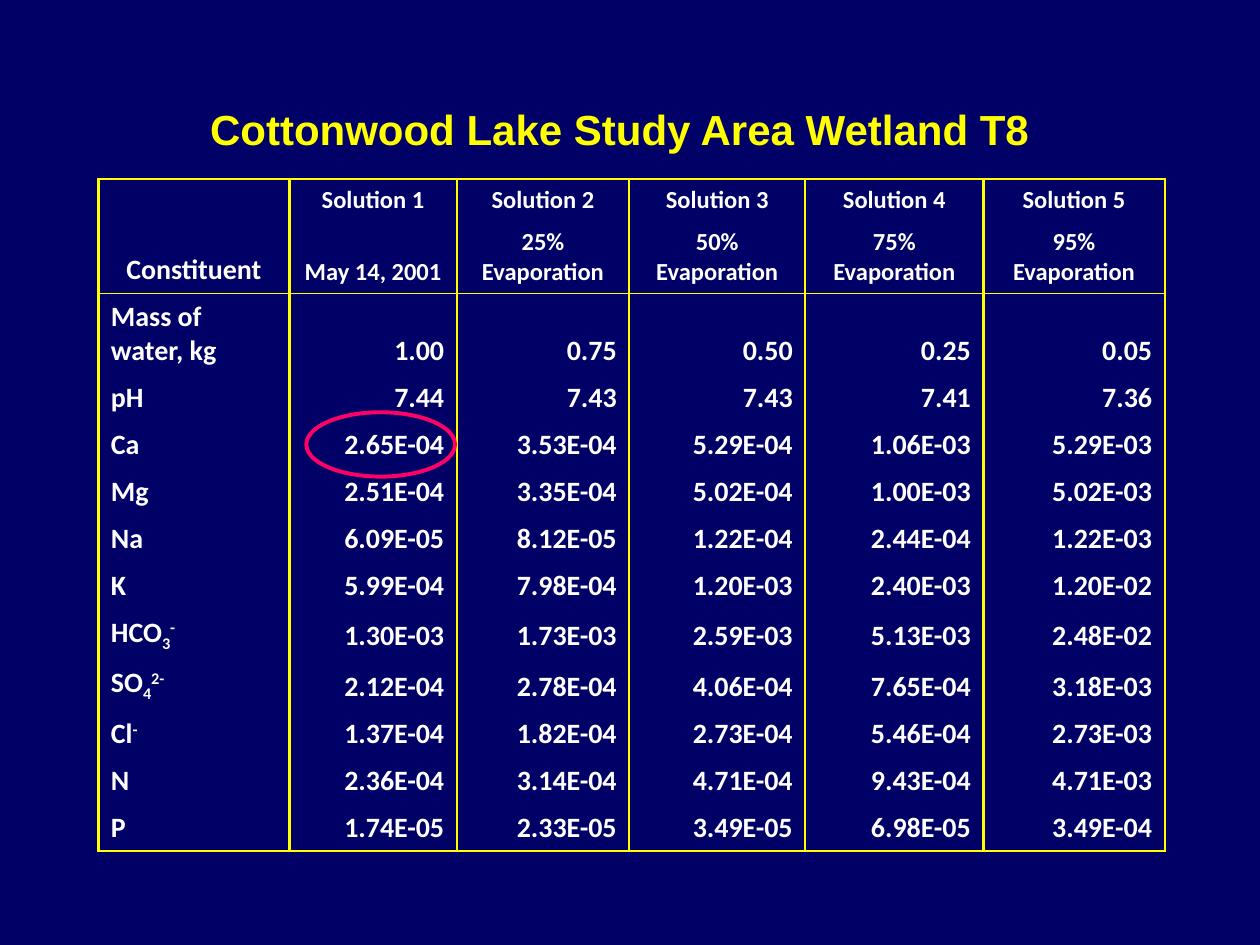
import dataclasses
import typing

import lxml.etree
import pptx
import pptx.dml.color
import pptx.enum.shapes
import pptx.enum.text
import pptx.oxml.ns
import pptx.util

Pt = pptx.util.Pt
Align = pptx.enum.text.PP_ALIGN
Anchor = pptx.enum.text.MSO_ANCHOR


@dataclasses.dataclass(frozen=True)
class Theme:
    background: str = "000066"
    accent: str = "FFFF00"
    text: str = "FFFFFF"
    highlight: str = "FF0066"
    title_font: str = "Arial"
    table_font: str = "Calibri"
    title_size: float = 24
    body_size: float = 16
    header_size: float = 14
    frame_line: float = 1.5
    header_line: float = 1
    highlight_line: float = 2.25


class Box(typing.NamedTuple):
    left: float
    top: float
    width: float
    height: float

    def lengths(self) -> list[pptx.util.Length]:
        return [Pt(length) for length in self]


class Piece(typing.NamedTuple):
    text: str
    baseline: int = 0


@dataclasses.dataclass(frozen=True)
class Constituent:
    name: tuple[Piece, ...]
    values: str
    height: float = 26.4


def sub(text: str) -> Piece:
    return Piece(text, -25)


def sup(text: str) -> Piece:
    return Piece(text, 30)


THEME = Theme()
TITLE = "Cottonwood Lake Study Area Wetland T8"
TITLE_BOX = Box(113, 55.4, 483.8, 36)
TABLE_LEFT, TABLE_TOP = 56.2, 102.2
COLUMN_WIDTHS = (109.2, 95.6, 98.6, 100.6, 101.8, 103.6)
HEADER_HEIGHTS = (24, 41)
CALCIUM_RING = Box(175, 235.6, 85, 36.8)
CONDITIONS = ("May 14, 2001", *(f"{share}% Evaporation" for share in (25, 50, 75, 95)))
CONSTITUENTS = (
    Constituent((Piece("Mass of water, kg"),), "1.00 0.75 0.50 0.25 0.05", 46),
    Constituent((Piece("pH"),), "7.44 7.43 7.43 7.41 7.36"),
    Constituent((Piece("Ca"),), "2.65E-04 3.53E-04 5.29E-04 1.06E-03 5.29E-03"),
    Constituent((Piece("Mg"),), "2.51E-04 3.35E-04 5.02E-04 1.00E-03 5.02E-03"),
    Constituent((Piece("Na"),), "6.09E-05 8.12E-05 1.22E-04 2.44E-04 1.22E-03"),
    Constituent((Piece("K"),), "5.99E-04 7.98E-04 1.20E-03 2.40E-03 1.20E-02"),
    Constituent((Piece("HCO"), sub("3"), sup("-")),
                "1.30E-03 1.73E-03 2.59E-03 5.13E-03 2.48E-02", 28.8),
    Constituent((Piece("SO"), sub("4"), sup("2-")),
                "2.12E-04 2.78E-04 4.06E-04 7.65E-04 3.18E-03", 28.8),
    Constituent((Piece("Cl"), sup("-")), "1.37E-04 1.82E-04 2.73E-04 5.46E-04 2.73E-03"),
    Constituent((Piece("N"),), "2.36E-04 3.14E-04 4.71E-04 9.43E-04 4.71E-03"),
    Constituent((Piece("P"),), "1.74E-05 2.33E-05 3.49E-05 6.98E-05 3.49E-04"),
)


def rgb(colour: str) -> pptx.dml.color.RGBColor:
    return pptx.dml.color.RGBColor.from_string(colour)


def apply_format(target: typing.Any, values: dict[str, typing.Any]) -> None:
    for name, value in values.items():
        setattr(target, name, value)


def write_pieces(paragraph, pieces: typing.Iterable[Piece], font: str, size: float,
                 colour: str) -> None:
    for piece in pieces:
        run = paragraph.add_run()
        run.text = piece.text
        apply_format(run.font, {"name": font, "size": Pt(size), "bold": True})
        run.font.color.rgb = rgb(colour)
        if piece.baseline:
            run.font._element.set("baseline", str(piece.baseline * 1000))


def set_borders(cell, top: float, bottom: float) -> None:
    properties = cell._tc.get_or_add_tcPr()
    widths = {"lnL": THEME.frame_line, "lnR": THEME.frame_line, "lnT": top, "lnB": bottom}
    qn = pptx.oxml.ns.qn
    for side, width in widths.items():
        line = lxml.etree.SubElement(properties, qn(f"a:{side}"), w=str(Pt(width)))
        if width:
            fill = lxml.etree.SubElement(line, qn("a:solidFill"))
            lxml.etree.SubElement(fill, qn("a:srgbClr"), val=THEME.accent)
        else:
            lxml.etree.SubElement(line, qn("a:noFill"))


def fill_cell(cell, pieces: typing.Iterable[Piece], size: float, align) -> None:
    cell.vertical_anchor = Anchor.BOTTOM
    paragraph = cell.text_frame.paragraphs[0]
    paragraph.alignment = align
    write_pieces(paragraph, pieces, THEME.table_font, size, THEME.text)


def add_constituent_table(slide) -> None:
    heights = (*HEADER_HEIGHTS, *(item.height for item in CONSTITUENTS))
    box = Box(TABLE_LEFT, TABLE_TOP, sum(COLUMN_WIDTHS), sum(heights))
    table = slide.shapes.add_table(len(heights), len(COLUMN_WIDTHS), *box.lengths()).table
    apply_format(table, {"first_row": False, "horz_banding": False})
    for column, width in zip(table.columns, COLUMN_WIDTHS):
        column.width = Pt(width)

    last = len(heights) - 1
    tops = {0: THEME.frame_line, 2: THEME.header_line}
    bottoms = {1: THEME.header_line, last: THEME.frame_line}
    for index, (row, height) in enumerate(zip(table.rows, heights)):
        row.height = Pt(height)
        for column, cell in enumerate(row.cells):
            merged_top = index == 0 and column == 0
            set_borders(cell, tops.get(index, 0), bottoms.get(1 if merged_top else index, 0))
            cell.fill.background()

    table.cell(0, 0).merge(table.cell(1, 0))
    fill_cell(table.cell(0, 0), [Piece("Constituent")], THEME.body_size, Align.CENTER)
    for number, condition in enumerate(CONDITIONS, 1):
        for row, label in enumerate((f"Solution {number}", condition)):
            fill_cell(table.cell(row, number), [Piece(label)], THEME.header_size, Align.CENTER)
    for row, item in enumerate(CONSTITUENTS, len(HEADER_HEIGHTS)):
        fill_cell(table.cell(row, 0), item.name, THEME.body_size, Align.LEFT)
        for column, value in enumerate(item.values.split(), 1):
            fill_cell(table.cell(row, column), [Piece(value)], THEME.body_size, Align.RIGHT)


def add_title(slide) -> None:
    frame = slide.shapes.add_textbox(*TITLE_BOX.lengths()).text_frame
    apply_format(frame, {"word_wrap": False,
                         "auto_size": pptx.enum.text.MSO_AUTO_SIZE.SHAPE_TO_FIT_TEXT})
    write_pieces(frame.paragraphs[0], [Piece(TITLE)], THEME.title_font, THEME.title_size,
                 THEME.accent)


def add_calcium_ring(slide) -> None:
    ring = slide.shapes.add_shape(pptx.enum.shapes.MSO_SHAPE.OVAL, *CALCIUM_RING.lengths())
    ring.shadow.inherit = False
    ring.fill.background()
    ring.line.color.rgb = rgb(THEME.highlight)
    ring.line.width = Pt(THEME.highlight_line)


def main() -> None:
    deck = pptx.Presentation()
    apply_format(deck, {"slide_width": Pt(720), "slide_height": Pt(540)})
    slide = deck.slides.add_slide(deck.slide_layouts[6])
    slide.background.fill.solid()
    slide.background.fill.fore_color.rgb = rgb(THEME.background)
    add_constituent_table(slide)
    add_title(slide)
    add_calcium_ring(slide)
    deck.save("out.pptx")


if __name__ == "__main__":
    main()
